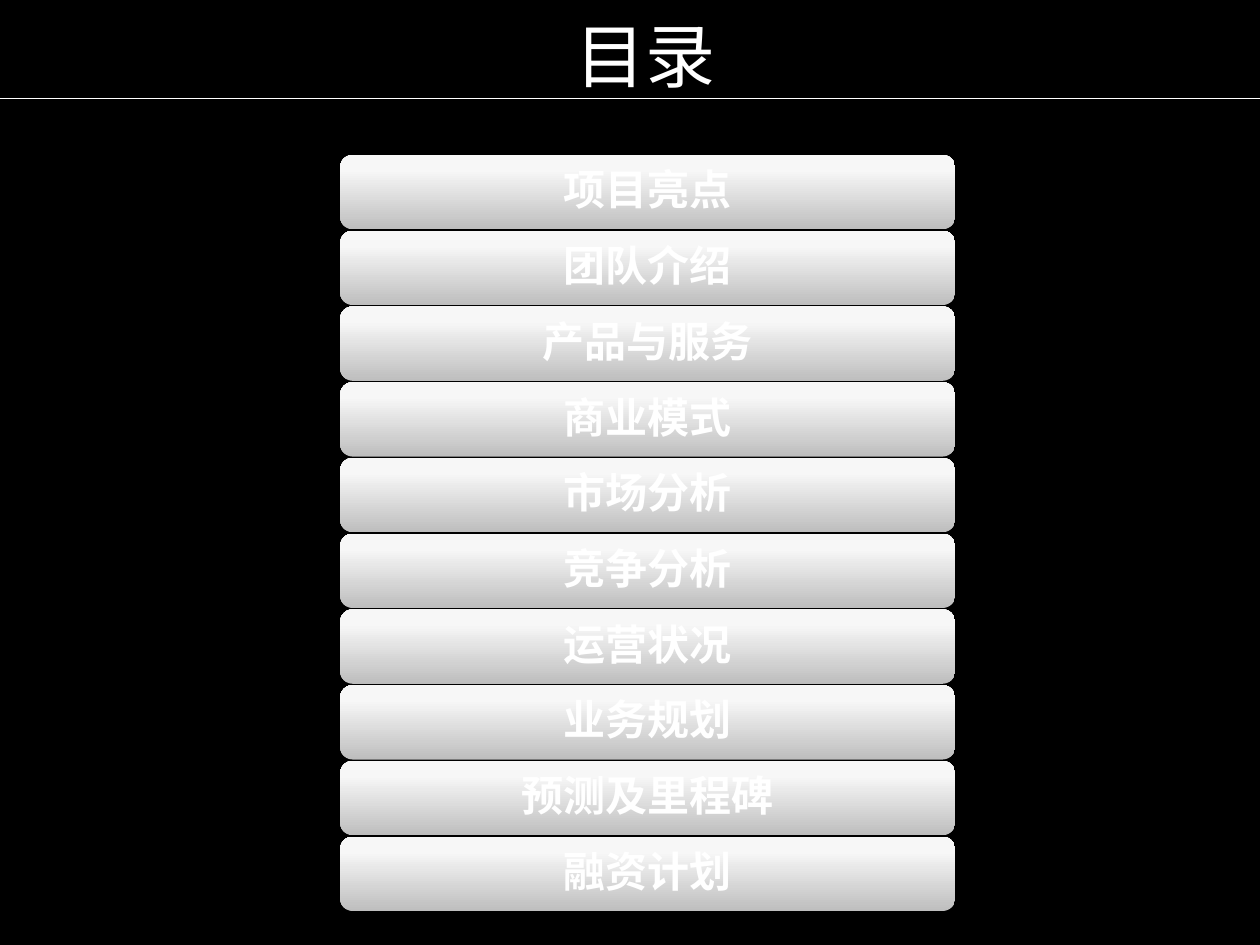
from copy import deepcopy

from lxml import etree
from pptx import Presentation
from pptx.dml.color import RGBColor
from pptx.enum.shapes import MSO_CONNECTOR, MSO_SHAPE
from pptx.enum.text import MSO_ANCHOR, MSO_AUTO_SIZE, PP_ALIGN
from pptx.oxml.ns import qn
from pptx.util import Inches, Pt

ROUND_RECT = MSO_SHAPE.ROUNDED_RECTANGLE
STRAIGHT = MSO_CONNECTOR.STRAIGHT
CENTER = PP_ALIGN.CENTER
MIDDLE = MSO_ANCHOR.MIDDLE
GROW = MSO_AUTO_SIZE.SHAPE_TO_FIT_TEXT

FONT = "Noto Sans CJK SC"
WHITE = "FFFFFF"
BLACK = "000000"
BAR_STOPS = [(0, "BEBEBE"), (0.8, "F7F7F7"), (1, "F8F8F8")]
TOPICS = ["项目亮点", "团队介绍", "产品与服务", "商业模式", "市场分析",
          "竞争分析", "运营状况", "业务规划", "预测及里程碑", "融资计划"]


def rgb(value):
    return RGBColor.from_string(value)


class Deck:
    """Holds the text style and the slide being filled."""

    def __init__(self, slide, font=FONT, color=WHITE):
        self.s = slide
        self.font = font
        self.color = color

    def background(self, color):
        fill = self.s.background.fill
        fill.solid()
        fill.fore_color.rgb = rgb(color)

    def set_text(self, tf, text, size, bold=False):
        tf.word_wrap = True
        tf.text = text
        p = tf.paragraphs[0]
        p.alignment = CENTER
        r = p.runs[0]
        r.font.name = self.font
        r.font.size = Pt(size)
        r.font.bold = bold
        r.font.color.rgb = rgb(self.color)
        ea = etree.SubElement(r.font._element, qn("a:ea"))
        ea.set("typeface", self.font)

    def title(self, text, x, y, w, h):
        tf = self.s.shapes.add_textbox(Inches(x), Inches(y), Inches(w), Inches(h)).text_frame
        self.set_text(tf, text, 40)
        tf.auto_size = GROW

    def rule(self, y, length):
        line = self.s.shapes.add_connector(STRAIGHT, 0, Inches(y), Inches(length), Inches(y))
        line.line.color.rgb = rgb(self.color)
        line.line.width = Pt(0.75)
        etree.SubElement(line._element.spPr, qn("a:effectLst"))

    def bar(self, text, x, y, w, h):
        sp = self.s.shapes.add_shape(ROUND_RECT, Inches(x), Inches(y), Inches(w), Inches(h))
        sp.line.fill.background()
        self.shade(sp)
        self.soft_shadow(sp)
        tf = sp.text_frame
        tf.vertical_anchor = MIDDLE
        tf.margin_top = tf.margin_bottom = Inches(0.1)
        self.set_text(tf, text, 24, bold=True)
        tf.paragraphs[0].line_spacing = 0.9

    def shade(self, sp):
        """Fill with the three-stop gradient, dark at the bottom."""
        sp.fill.gradient()
        sp.fill.gradient_angle = 90
        stops = sp._element.spPr.find(qn("a:gradFill")).find(qn("a:gsLst"))
        stops.append(deepcopy(stops[0]))
        for stop, (position, color) in zip(sp.fill.gradient_stops, BAR_STOPS):
            stop.position = position
            stop.color.rgb = rgb(color)

    def soft_shadow(self, sp):
        sp.shadow.inherit = False
        effects = sp._element.spPr.find(qn("a:effectLst"))
        shadow = etree.SubElement(effects, qn("a:outerShdw"), blurRad=str(Pt(3.1)),
                                  dist=str(Pt(1.8)), dir="5400000", rotWithShape="0")
        color = etree.SubElement(shadow, qn("a:srgbClr"), val=BLACK)
        etree.SubElement(color, qn("a:alpha"), val="35000")


def main():
    prs = Presentation()
    prs.slide_width, prs.slide_height = Inches(10), Inches(7.5)
    deck = Deck(prs.slides.add_slide(prs.slide_layouts[6]))
    deck.background(BLACK)
    deck.rule(0.78, 10)
    deck.title("目录", 2.09, 0.05, 6.06, 0.77)

    first, last = 1.23, 6.64
    pitch = (last - first) / (len(TOPICS) - 1)
    for i, topic in enumerate(TOPICS):
        deck.bar(topic, 2.7, first + i * pitch, 4.88, 0.59)
    prs.save("out.pptx")


if __name__ == "__main__":
    main()
